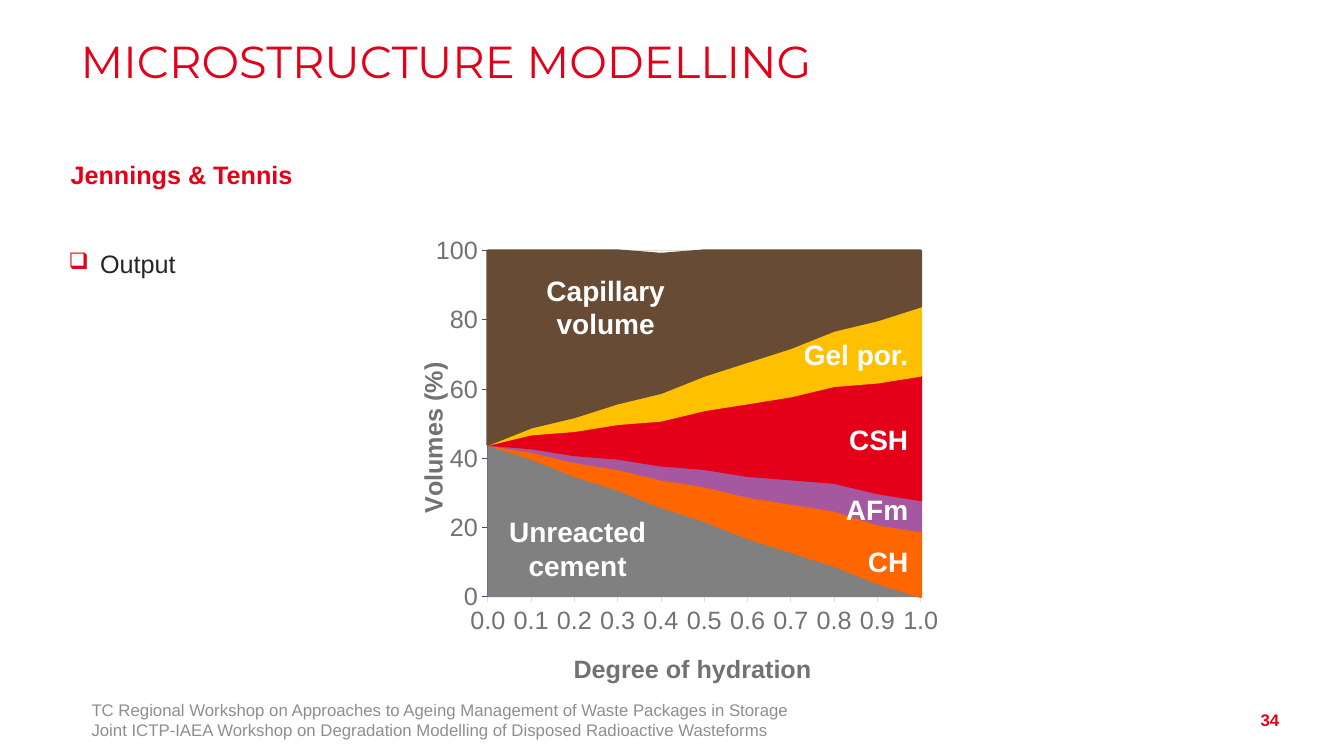
from dataclasses import dataclass

from lxml.etree import SubElement
from pptx import Presentation
from pptx.chart.data import CategoryChartData
from pptx.dml.color import RGBColor
from pptx.enum.chart import XL_CHART_TYPE, XL_TICK_MARK
from pptx.enum.text import MSO_ANCHOR, MSO_AUTO_SIZE, PP_ALIGN
from pptx.oxml import parse_xml
from pptx.oxml.ns import nsdecls, qn
from pptx.util import Pt

# Content
TITLE = "MICROSTRUCTURE MODELLING"
SUBTITLE = "Jennings & Tennis"
BULLET = "Output"
FOOTER = [
    "TC Regional Workshop on Approaches to Ageing Management of Waste Packages in Storage",
    "Joint ICTP-IAEA Workshop on Degradation Modelling of Disposed Radioactive Wasteforms",
]
PAGE = "34"
HYDRATION_TITLE = "Degree of hydration"
VOLUME_TITLE = "Volumes (%)"
HYDRATION = [f"{step / 10:.1f}" for step in range(11)]
PHASES = [  # name, colour, line width, volumes
    ("Unreacted cement", "808080", 0.75, (44, 40, 35, 31, 26, 22, 17, 13, 9, 4, 0)),
    ("CH", "FF6600", 2, (0, 2, 4, 6, 8, 10, 12, 14, 16, 17, 19)),
    ("AFm", "A558A0", 2, (0, 1, 2, 3, 4, 5, 6, 7, 8, 9, 9)),
    ("CSH", "E50019", 2, (0, 4, 7, 10, 13, 17, 21, 24, 28, 32, 36)),
    ("Gel por.", "FFC000", 2, (0, 2, 4, 6, 8, 10, 12, 14, 16, 18, 20)),
    ("Capillary volume", "684B34", 2, (56, 52, 48, 44, 40, 36, 32, 28, 24, 20, 16)),
]
WIDE_LABELS = [  # lines, left, top
    (["Capillary", "volume"], 342.7, 191.5),
    (["Unreacted cement"], 322.6, 364.3),
]
EDGE_LABELS = [("Gel por.", 237.6), ("CSH", 298), ("AFm", 348.5), ("CH", 385.2)]


@dataclass(frozen=True)
class Theme:
    font: str = "Arial"
    title_font: str = "Montserrat"
    red: str = "E50019"
    text: str = "262626"
    axis_text: str = "727272"
    footer: str = "8E8E8E"
    grid: str = "DEDEDE"
    volume_line: str = "3E4A83"
    white: str = "FFFFFF"
    title_size: int = 32
    label_size: int = 20
    body_size: int = 18
    small_size: int = 12


THEME = Theme()
EDGE_RIGHT, EDGE_WIDTH = 655.9, 133

deck = Presentation()
deck.slide_width, deck.slide_height = Pt(960), Pt(540)
slide = deck.slides.add_slide(deck.slide_layouts[5])


def style(font, size, color, bold=False, name=THEME.font):
    font.name, font.size, font.bold = name, Pt(size), bold
    font.color.rgb = RGBColor.from_string(color)


def add_text(lines, box, *, size, color, bold=False, name=THEME.font, inset=7.2,
             align=PP_ALIGN.LEFT, anchor=MSO_ANCHOR.TOP, spacing=None,
             bullet=None, holder=None):
    shape = holder or slide.shapes.add_textbox(0, 0, 0, 0)
    shape.left, shape.top, shape.width, shape.height = map(Pt, box)
    frame = shape.text_frame
    frame.word_wrap, frame.auto_size = True, MSO_AUTO_SIZE.NONE
    frame.vertical_anchor = anchor
    frame.margin_left = frame.margin_right = Pt(inset)
    frame.margin_top = frame.margin_bottom = Pt(3.6)
    frame.text = "\n".join(lines)
    for paragraph in frame.paragraphs:
        paragraph.alignment = align
        if spacing:
            paragraph.line_spacing = spacing
        if bullet:
            props = paragraph._p.get_or_add_pPr()
            props.set("marL", str(Pt(22.5)))
            props.set("indent", str(Pt(-22.5)))
            SubElement(SubElement(props, qn("a:buClr")), qn("a:srgbClr"), val=THEME.red)
            SubElement(props, qn("a:buSzPct"), val="90000")
            SubElement(props, qn("a:buChar"), char=bullet)
        for run in paragraph.runs:
            style(run.font, size, color, bold, name)


def place(parent, index, inner=False, **fractions):
    """Give a chart part a manual layout in fractions of the chart."""
    for old in parent.findall(qn("c:layout")):
        parent.remove(old)
    target = '<c:layoutTarget val="inner"/>' if inner else ""
    modes = "".join(f'<c:{key}Mode val="edge"/>' for key in "xy")
    values = "".join(f'<c:{key} val="{value}"/>' for key, value in fractions.items())
    parent.insert(index, parse_xml(
        f'<c:layout {nsdecls("c")}><c:manualLayout>{target}{modes}{values}'
        "</c:manualLayout></c:layout>"))


def format_axis(axis, title, line, x, y):
    axis.has_title = True
    axis.axis_title.text_frame.text = title
    run = axis.axis_title.text_frame.paragraphs[0].runs[0]
    style(run.font, THEME.body_size, THEME.axis_text, bold=True)
    place(axis.axis_title._element, 1, x=x, y=y)
    style(axis.tick_labels.font, THEME.body_size, THEME.axis_text)
    axis.major_tick_mark, axis.minor_tick_mark = XL_TICK_MARK.OUTSIDE, XL_TICK_MARK.NONE
    axis.has_major_gridlines = True
    for target, color in ((axis.format.line, line),
                          (axis.major_gridlines.format.line, THEME.grid)):
        target.color.rgb = RGBColor.from_string(color)
        target.width = Pt(0.75)


# Title, subtitle and bullet
add_text([TITLE], (57.6, 24.5, 844.6, 68.4), size=THEME.title_size, color=THEME.red,
         name=THEME.title_font, inset=0, spacing=0.9, holder=slide.shapes.title)
add_text([SUBTITLE], (50.4, 110.2, 844.6, 51), size=THEME.body_size, color=THEME.red,
         bold=True, inset=0)
add_text([BULLET], (49, 163.4, 529, 177), size=THEME.body_size, color=THEME.text,
         inset=0, align=PP_ALIGN.JUSTIFY, spacing=1.5, bullet="❑")

# Footer
add_text(FOOTER, (58.3, 499.7, 690, 28.8), size=THEME.small_size, color=THEME.footer,
         anchor=MSO_ANCHOR.MIDDLE)
add_text([PAGE], (866.2, 499.7, 54.7, 28.8), size=THEME.small_size, color=THEME.red,
         bold=True, align=PP_ALIGN.RIGHT, anchor=MSO_ANCHOR.MIDDLE)

# Stacked area chart of the phases
volumes = CategoryChartData()
volumes.categories = HYDRATION
for phase, _, _, amounts in PHASES:
    volumes.add_series(phase, amounts)
chart = slide.shapes.add_chart(XL_CHART_TYPE.AREA_STACKED, Pt(286.6), Pt(159.1),
                               Pt(386.6), Pt(334.8), volumes).chart
chart.has_title = chart.has_legend = False
style(chart.font, THEME.body_size, THEME.text)
plot = chart.plots[0]
plot.vary_by_categories = False
for series, (_, color, width, _) in zip(plot.series, PHASES):
    series.format.fill.solid()
    series.format.fill.fore_color.rgb = RGBColor.from_string(color)
    series.format.line.color.rgb = RGBColor.from_string(color)
    series.format.line.width = Pt(width)

format_axis(chart.category_axis, HYDRATION_TITLE, THEME.grid, 0.31, 0.91)
format_axis(chart.value_axis, VOLUME_TITLE, THEME.volume_line, 0.02, 0.29)
chart.value_axis.minimum_scale, chart.value_axis.maximum_scale = 0, 100
chart.value_axis.major_unit = 20
chart.value_axis.tick_labels.number_format = "General"
chart.value_axis.tick_labels.number_format_is_linked = False
for crossing in chart._chartSpace.iter(qn("c:crossBetween")):
    crossing.set("val", "midCat")
place(chart._chartSpace.chart.plotArea, 0, inner=True, x=0.16, y=0.06, w=0.8, h=0.74)

# Phase labels over the areas
label_format = dict(size=THEME.label_size, color=THEME.white, bold=True)
for lines, left, top in WIDE_LABELS:
    add_text(lines, (left, top, 180, 55.4), align=PP_ALIGN.CENTER, **label_format)
for phase, top in EDGE_LABELS:
    add_text([phase], (EDGE_RIGHT - EDGE_WIDTH, top, EDGE_WIDTH, 31.7),
             align=PP_ALIGN.RIGHT, **label_format)

deck.save("out.pptx")
